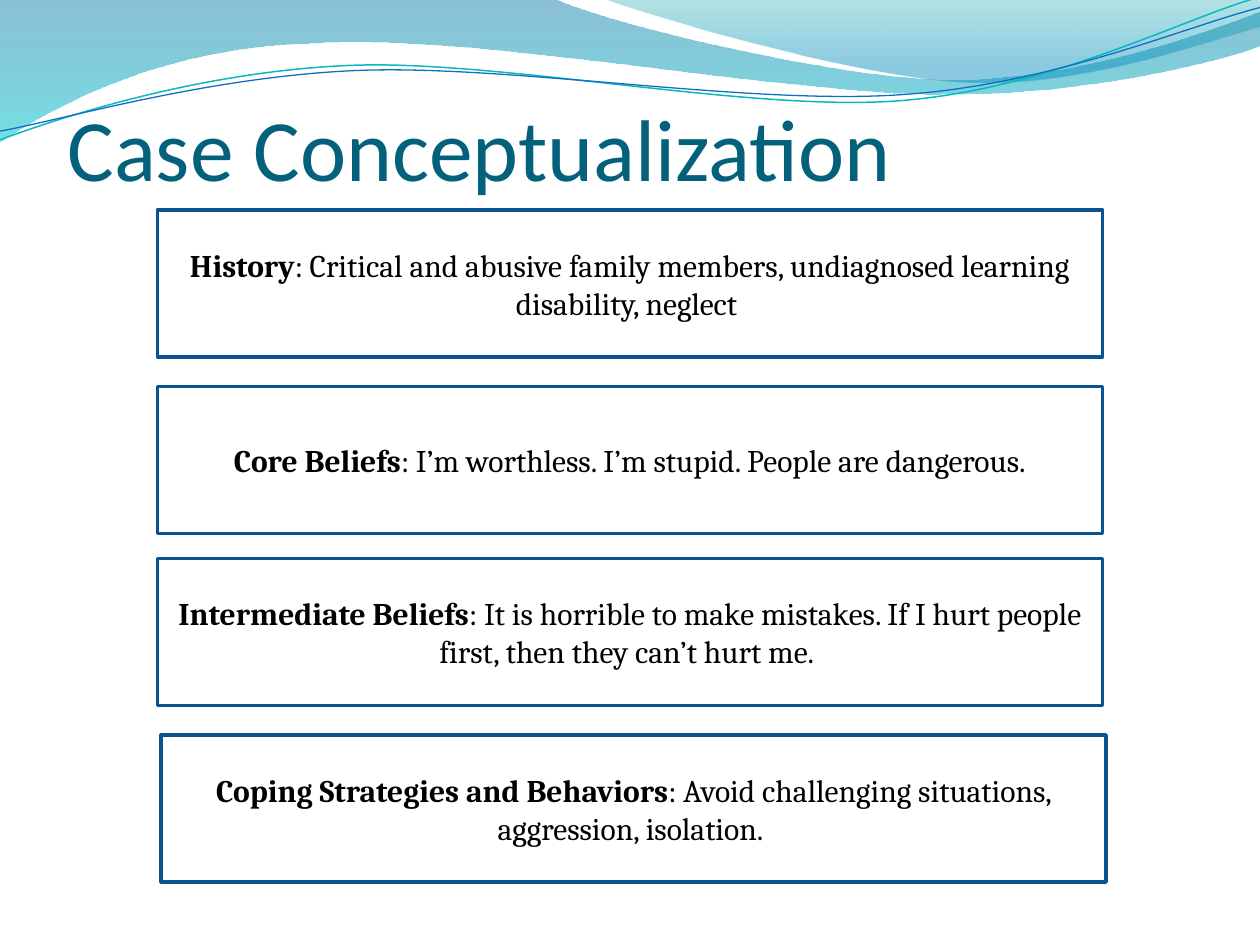
import math

from lxml import etree
from pptx import Presentation
from pptx.dml.color import RGBColor
from pptx.enum import shapes, text
from pptx.oxml import ns
from pptx.util import Pt

WHITE = RGBColor(0xFF, 0xFF, 0xFF)
BLACK = RGBColor(0, 0, 0)
TITLE = RGBColor(0x04, 0x61, 0x7B)
BORDER = RGBColor(0x0B, 0x52, 0x92)
DEEP_BLUE = RGBColor(0x00, 0x74, 0xA1)
CYAN = RGBColor(0x00, 0xC6, 0xCF)
TEAL = RGBColor(0x00, 0xA1, 0xA9)
SKY = RGBColor(0x00, 0x8B, 0xBF)
TEAL_LINE = RGBColor(0x0A, 0xB8, 0xBF)
BLUE_LINE = RGBColor(0x0F, 0x6F, 0xC6)

TILT = -2.7
PIVOT = (359.5, 42)

WAVES = [
    ([(0, 0), (316.8, -0.7),
      (342.7, 12.2, 478.1, 45.4, 545.8, 45.4),
      (614.2, 45.4, 689.8, 18.7, 720, 6.5), (720.7, 25.9),
      (707.8, 31.7, 626.4, 54.7, 537.1, 54),
      (447.8, 54, 275, 20.2, 185, 24.5),
      (92.9, 25.9, 33.1, 59.8, -0.7, 81.4)],
     [(0, DEEP_BLUE, 45), (1, CYAN, 55)]),
    ([(344.9, -0.7), (366.5, 7.9, 491, 44.6, 553.7, 46.8),
      (616.3, 49.7, 691.9, 23, 720, 15.1), (720, 0)],
     [(0, TEAL, 30), (0.8, SKY, 45)]),
]

RIPPLES = [
    ([(0, 79.9), (34.6, 67, 113.8, 41, 199.4, 37.4),
      (284.4, 33.8, 427, 64.1, 513.4, 57.6),
      (599.8, 51.1, 675.4, 10.8, 718.6, -1.4)], TEAL_LINE, 0.85),
    ([(0, 74.9), (33.8, 69.1, 118.1, 43.9, 203.8, 40.3),
      (290.2, 36.7, 429.8, 60.5, 516.2, 54),
      (601.9, 48.2, 677.5, 15.1, 720, 4.3)], BLUE_LINE, 0.75),
]

BELIEFS = [
    (90, 120, "History",
     ": Critical and abusive family members, undiagnosed learning disability, neglect "),
    (90, 220.9, "Core Beliefs",
     ": I’m worthless. I’m stupid. People are dangerous."),
    (90, 319.2, "Intermediate Beliefs",
     ": It is horrible to make mistakes. If I hurt people first, then they can’t hurt me. "),
    (92.1, 420, "Coping Strategies and Behaviors",
     ": Avoid challenging situations, aggression, isolation. "),
]


def turn(segment, degrees):
    cos, sin = math.cos(math.radians(degrees)), math.sin(math.radians(degrees))
    turned = []
    for x, y in zip(segment[::2], segment[1::2]):
        dx, dy = x - PIVOT[0], y - PIVOT[1]
        turned += [PIVOT[0] + dx * cos - dy * sin, PIVOT[1] + dx * sin + dy * cos]
    return turned


def add_outline(s, left, top, segments, close):
    ends = [(Pt(left + seg[-2]), Pt(top + seg[-1])) for seg in segments]
    builder = s.shapes.build_freeform(*ends[0])
    builder.add_line_segments(ends[1:], close=close)
    sp = builder.convert_to_shape()
    sp.shadow.inherit = False
    lines = list(sp.element.spPr.iter(ns.qn("a:lnTo")))
    for line, seg in zip(lines, segments[1:]):
        if len(seg) == 6:
            curve = etree.Element(ns.qn("a:cubicBezTo"))
            for x, y in zip(seg[::2], seg[1::2]):
                etree.SubElement(curve, ns.qn("a:pt"), x=str(Pt(left + x) - sp.left),
                                 y=str(Pt(top + y) - sp.top))
            line.getparent().replace(line, curve)
    return sp


def add_waves(s, left, top):
    for segments, stops in WAVES:
        sp = add_outline(s, left, top, segments, True)
        sp.line.fill.background()
        sp.fill.gradient()
        sp.fill.gradient_angle = 270
        colors = sp.element.spPr.iter(ns.qn("a:gs"))
        for stop, gs, (position, color, opacity) in zip(sp.fill.gradient_stops, colors, stops):
            stop.position = position
            stop.color.rgb = color
            etree.SubElement(gs[0], ns.qn("a:alpha"), val=str(opacity * 1000))
    for segments, color, width in RIPPLES:
        level = [turn(seg, -TILT) for seg in segments]
        sp = add_outline(s, left, top, level, False)
        sp.rotation = TILT
        sp.fill.background()
        sp.line.color.rgb = color
        sp.line.width = Pt(width)


def add_run(p, words, font, size, color, bold=False):
    r = p.add_run()
    r.text = words
    r.font.name = font
    r.font.size = Pt(size)
    r.font.color.rgb = color
    r.font.bold = bold


def add_title(s, left, top, width, height, words):
    sp = s.shapes.title
    sp.element.getparent().append(sp.element)
    sp.left, sp.top, sp.width, sp.height = map(Pt, (left, top, width, height))
    tf = sp.text_frame
    tf.auto_size = text.MSO_AUTO_SIZE.NONE
    tf.vertical_anchor = text.MSO_ANCHOR.BOTTOM
    tf.margin_left = tf.margin_right = tf.margin_bottom = 0
    tf.margin_top = Pt(3.6)
    p = tf.paragraphs[0]
    p.alignment = text.PP_ALIGN.LEFT
    add_run(p, words, "Calibri", 50, TITLE)


def add_belief(s, left, top, width, height, label, detail):
    sp = s.shapes.add_shape(shapes.MSO_SHAPE.RECTANGLE,
                            *map(Pt, (left, top, width, height)))
    sp.shadow.inherit = False
    sp.fill.solid()
    sp.fill.fore_color.rgb = WHITE
    sp.line.color.rgb = BORDER
    sp.line.width = Pt(2)
    tf = sp.text_frame
    tf.word_wrap = True
    tf.vertical_anchor = text.MSO_ANCHOR.MIDDLE
    p = tf.paragraphs[0]
    p.alignment = text.PP_ALIGN.CENTER
    add_run(p, label, "Cambria", 18, BLACK, True)
    add_run(p, detail, "Cambria", 18, BLACK)


def main():
    prs = Presentation()
    prs.slide_width, prs.slide_height = Pt(720), Pt(540)
    s = prs.slides.add_slide(prs.slide_layouts[5])
    add_waves(s, 0, 0)
    add_title(s, 38.5, 41.8, 648, 72, "Case Conceptualization")
    for left, top, label, detail in BELIEFS:
        add_belief(s, left, top, 540, 84, label, detail)
    prs.save("out.pptx")


if __name__ == "__main__":
    main()
